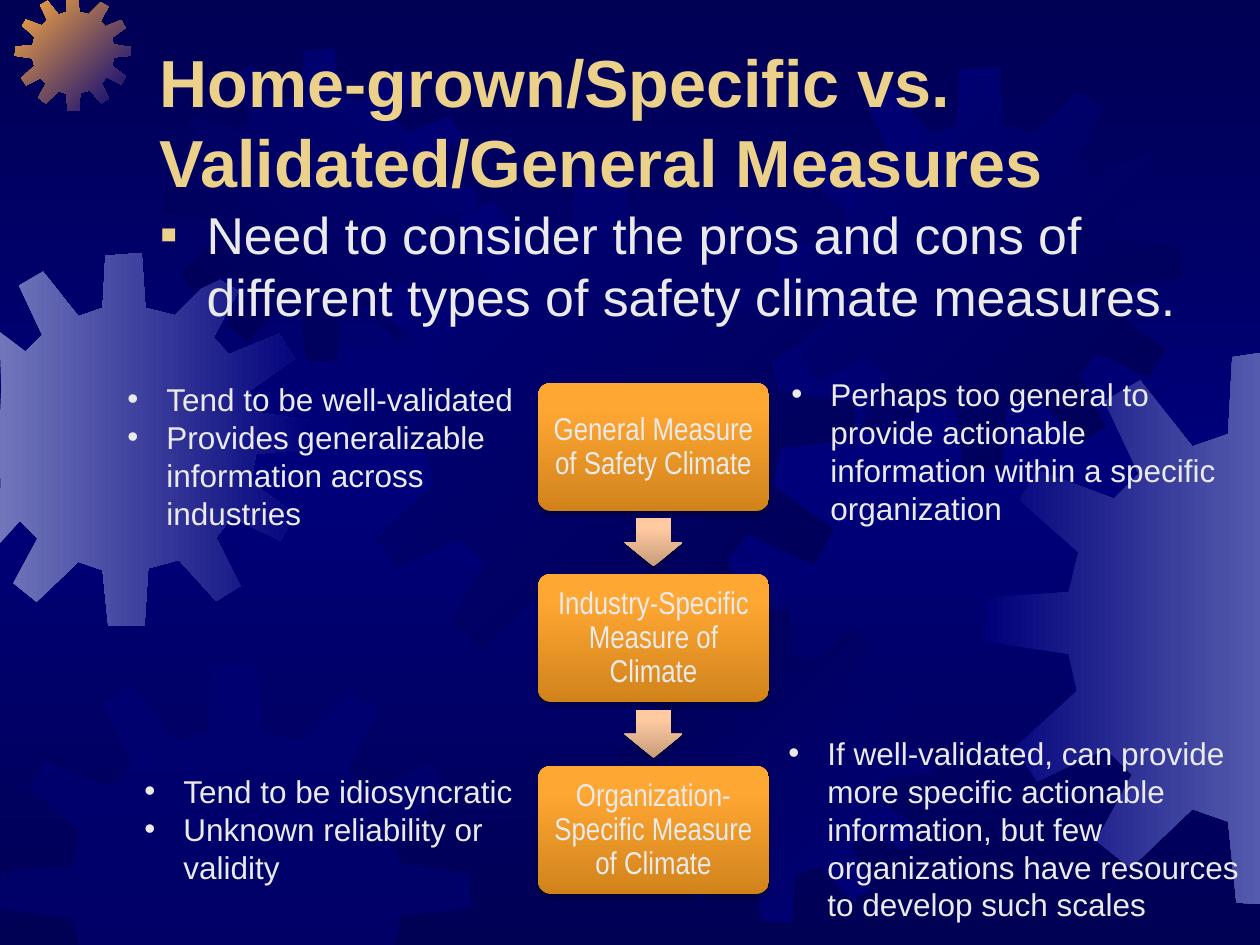
from lxml import etree
from pptx import Presentation
from pptx import util as u
from pptx.dml.color import RGBColor
from pptx.enum import shapes, text
from pptx.oxml.ns import qn

PX = 914400 / 126
WIDE, HIGH = 1260, 945
NAVY, BLUE, GOLD, PALE = "000054", "00007A", "EBD189", "EAEAEA"

TITLE = "Home-grown/Specific vs. Validated/General Measures"
LEAD = "Need to consider the pros and cons of different types of safety climate measures."
STEPS = [
    "General Measure of Safety Climate",
    "Industry-Specific Measure of Climate",
    "Organization-Specific Measure of Climate",
]
NOTES = [
    ((132, 766, 454, 127), ["Tend to be idiosyncratic", "Unknown reliability or validity"]),
    ((779, 369, 454, 165), ["Perhaps too general to provide actionable information within a specific organization"]),
    ((776, 728, 476, 204), ["If well-validated, can provide more specific actionable information, "
                            "but few organizations have resources to develop such scales"]),
    ((115, 374, 415, 165), ["Tend to be well-validated",
                            "Provides generalizable information across industries"]),
]

GRID = 401
TEETH = [
    (255, 67), (223, 59), (219, 0), (180, 3), (177, 59), (151, 68), (113, 20), (87, 35),
    (112, 88), (94, 106), (38, 85), (25, 107), (68, 145), (61, 174), (1, 178), (0, 210),
    (61, 219), (67, 246), (22, 287), (38, 312), (88, 288), (107, 307), (81, 355), (106, 375),
    (151, 332), (177, 341), (183, 400), (222, 401), (226, 339), (259, 330), (299, 374), (325, 358),
    (299, 306), (316, 284), (368, 309), (384, 281), (336, 246), (342, 216), (401, 210), (400, 180),
    (341, 171), (335, 148), (383, 114), (367, 87), (313, 109), (296, 91), (323, 41), (297, 25),
]
GEARS = [
    (-62, 253, 373, "7176BB", BLUE, 0),
    (15, -5, 116, "FCAB40", BLUE, 45),
    (164, 49, 312, NAVY, BLUE, 315),
    (349, 175, 506, BLUE, NAVY, 45),
    (0, 662, 471, BLUE, None, 0),
    (619, 610, 312, NAVY, BLUE, 45),
    (779, 67, 403, BLUE, NAVY, 45),
    (985, 353, 551, BLUE, "555BAD", 0),
]
ORANGE = [(0, "D1831B"), (80, "FFA733"), (100, "FFA835")]
PEACH = [(0, "C69C7A"), (80, "FFCAA1"), (100, "FFCBA3")]


def px(n):
    return u.Emu(round(n * PX))


def rgb(code):
    return RGBColor.from_string(code)


def sub(node, tag, **attrs):
    return etree.SubElement(node, qn(tag), {k: str(v) for k, v in attrs.items()})


def grade(part, fill, stops, angle):
    fill.gradient()
    grad = part.element.xpath(".//a:gradFill")[0]
    for kid in list(grad):
        grad.remove(kid)
    grad.set("rotWithShape", "0")
    row = sub(grad, "a:gsLst")
    for pos, code in stops:
        sub(sub(row, "a:gs", pos=pos * 1000), "a:srgbClr", val=code)
    sub(grad, "a:lin", ang=angle * 60000, scaled=0)


def place(shape, box):
    shape.left, shape.top, shape.width, shape.height = map(px, box)


def write(shape, lines, size, color=PALE, font="Arial", bold=False, align="LEFT",
          anchor="TOP", mark=None, tint=None, hang=0, inset=None, space=None):
    frame = shape.text_frame
    frame.word_wrap = True
    frame.auto_size = text.MSO_AUTO_SIZE.NONE
    frame.vertical_anchor = getattr(text.MSO_ANCHOR, anchor)
    if inset is not None:
        frame.margin_left = frame.margin_right = px(inset)
        frame.margin_top = frame.margin_bottom = px(inset)
    for i, line in enumerate(lines):
        para = frame.paragraphs[0] if i == 0 else frame.add_paragraph()
        para.alignment = getattr(text.PP_ALIGN, align)
        para.space_before = u.Pt(0)
        if space:
            para.line_spacing = space
        if mark:
            props = para._p.get_or_add_pPr()
            props.set("marL", str(px(hang)))
            props.set("indent", str(-px(hang)))
            if tint:
                sub(sub(props, "a:buClr"), "a:srgbClr", val=tint)
            sub(props, "a:buFont", typeface="Arial")
            sub(props, "a:buChar", char=mark)
        run = para.add_run()
        run.text = line
        run.font.size, run.font.name, run.font.bold = u.Pt(size), font, bold
        run.font.color.rgb = rgb(color)


def draw_gear(slide, left, top, size, start, end, angle):
    pts = [(px(min(max(left + x * size / GRID, 0), WIDE)),
            px(min(max(top + y * size / GRID, 0), HIGH))) for x, y in TEETH]
    pen = slide.shapes.build_freeform(*pts[0])
    pen.add_line_segments(pts[1:], close=True)
    gear = pen.convert_to_shape()
    gear.shadow.inherit = False
    gear.line.fill.background()
    if end:
        grade(gear, gear.fill, [(0, start), (100, end)], angle)
    else:
        gear.fill.solid()
        gear.fill.fore_color.rgb = rgb(start)
        sub(gear.element.xpath(".//p:spPr/a:solidFill/a:srgbClr")[0], "a:alpha", val=50000)


def add_block(slide, kind, box, stops, adjust):
    block = slide.shapes.add_shape(kind, *map(px, box))
    for i, value in enumerate(adjust):
        block.adjustments[i] = value
    block.line.fill.background()
    grade(block, block.fill, stops, 270)
    block.shadow.inherit = False
    glow = sub(block.element.xpath(".//a:effectLst")[0], "a:outerShdw", blurRad=u.Pt(3.1),
               dist=u.Pt(1.8), dir=5400000, rotWithShape=0)
    sub(sub(glow, "a:srgbClr", val="000000"), "a:alpha", val=35000)
    return block


def main():
    deck = Presentation()
    deck.slide_width, deck.slide_height = px(WIDE), px(HIGH)
    slide = deck.slides.add_slide(deck.slide_layouts[1])
    grade(slide, slide.background.fill, [(0, NAVY), (50, BLUE), (100, NAVY)], 90)

    title, body = slide.placeholders
    for gear in GEARS:
        draw_gear(slide, *gear)
    for holder in (title, body):
        slide.shapes._spTree.append(holder.element)
    place(title, (147, 42, 1071, 158))
    write(title, [TITLE], 38, color=GOLD, bold=True, anchor="MIDDLE")
    place(body, (147, 196, 1071, 156))
    write(body, [LEAD], 29.6, mark="▪", tint=GOLD, hang=47)

    left, first, last, wide, high = 538, 383, 766, 231, 128
    tops = [first + (last - first) * i // (len(STEPS) - 1) for i in range(len(STEPS))]
    for i, (top, step) in enumerate(zip(tops, STEPS)):
        box = add_block(slide, shapes.MSO_SHAPE.ROUNDED_RECTANGLE,
                        (left, top, wide, high), ORANGE, [0.1])
        write(box, [step], 18, font="Arial Narrow", align="CENTER", anchor="MIDDLE",
              inset=8, space=0.9)
        if i:
            mid = (tops[i - 1] + high + top) / 2
            arrow = add_block(slide, shapes.MSO_SHAPE.RIGHT_ARROW,
                              (left + wide / 2 - 24, mid - 29, 48, 58), PEACH, [0.6, 0.5])
            arrow.rotation = 90

    for spot, lines in NOTES:
        note = slide.shapes.add_textbox(*map(px, spot))
        write(note, lines, 18, mark="•", hang=39)
    deck.save("out.pptx")


if __name__ == "__main__":
    main()
